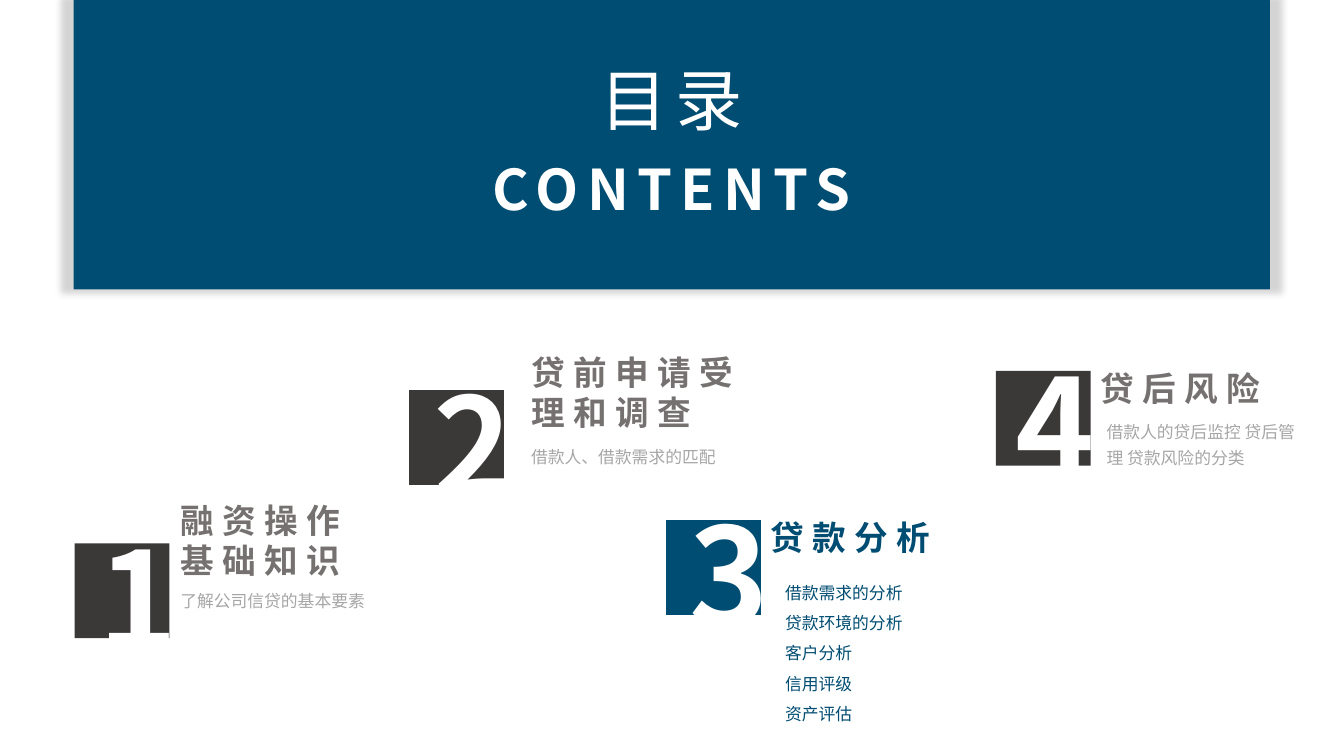
from lxml.etree import SubElement
from pptx import Presentation
from pptx.dml.color import RGBColor
from pptx.enum.shapes import MSO_SHAPE
from pptx.enum.text import MSO_ANCHOR, MSO_AUTO_SIZE, PP_ALIGN
from pptx.oxml.ns import qn
from pptx.util import Pt

BLUE = RGBColor(0x00, 0x4D, 0x73)
CHARCOAL = RGBColor(0x3B, 0x38, 0x38)
GRAY = RGBColor(0x76, 0x71, 0x71)
LIGHT_GRAY = RGBColor(0xA6, 0xA6, 0xA6)
WHITE = RGBColor(0xFF, 0xFF, 0xFF)

SANS = "Noto Sans CJK SC"
LATIN = "Calibri"

BANNER = (52.56, -0.72, 854.64, 207.36)
# text, top, size, font, bold
BANNER_LINES = [
    ("CONTENTS", 92.88, 40, SANS, True),
    ("目录", 33.84, 48, LATIN, False),
]
BANNER_LINE_HEIGHT = 69.12

SQUARE = 67.68
DIGIT_RISE = 24
DIGIT_SIZE = (68.4, 123.84)

# Boxes are left, top, width, height; colours are square, title, details
MUTED = (CHARCOAL, GRAY, LIGHT_GRAY)
ACTIVE = (BLUE, BLUE, BLUE)
SECTIONS = [
    dict(square=(53.28, 388.08), digit_shift=10, colors=MUTED, spacing=1.3,
         title="融资操作基础知识", title_box=(121.68, 350.64, 152.64, 67.68),
         details=["了解公司信贷的基本要素"],
         details_box=(121.68, 414, 152.64, 25.92)),
    dict(square=(292.32, 278.64), digit_shift=10, colors=MUTED, spacing=1.3,
         title="贷前申请受理和调查", title_box=(372.24, 247.68, 182.16, 64.8),
         details=["借款人、借款需求的匹配"],
         details_box=(372.24, 311.04, 152.64, 25.92)),
    dict(square=(475.92, 371.52), digit_shift=9.5, colors=ACTIVE, spacing=1.5,
         title="贷款分析", title_box=(543.6, 371.52, 152.64, 30.24),
         details=["借款需求的分析", "贷款环境的分析", "客户分析", "信用评级", "资产评估"],
         details_box=(553.68, 405.36, 171.36, 113.76)),
    dict(square=(711.36, 264.96), digit_shift=7.2, colors=MUTED, spacing=1.3,
         title="贷后风险", title_box=(779.04, 264.96, 152.64, 30.24),
         details=["借款人的贷后监控 贷后管理 贷款风险的分类"],
         details_box=(783.36, 293.04, 152.64, 44.64)),
]


def add_rectangle(slide, box, color):
    shape = slide.shapes.add_shape(MSO_SHAPE.RECTANGLE, *map(Pt, box))
    shape.shadow.inherit = False
    shape.fill.solid()
    shape.fill.fore_color.rgb = color
    shape.line.fill.background()
    return shape


def add_side_shadow(shape):
    """Give the shape a soft shadow that is slightly wider than the shape."""
    effects = shape._element.spPr.find(qn("a:effectLst"))
    shadow = SubElement(effects, qn("a:outerShdw"), blurRad=str(Pt(5)),
                        sx="102000", sy="102000", algn="ctr", rotWithShape="0")
    color = SubElement(shadow, qn("a:srgbClr"), val="000000")
    SubElement(color, qn("a:alpha"), val="16000")


def add_text(slide, box, lines, size, color, font=SANS, bold=False, tracking=0,
             anchor=MSO_ANCHOR.TOP, align=PP_ALIGN.LEFT, spacing=None, grow=False):
    text_frame = slide.shapes.add_textbox(*map(Pt, box)).text_frame
    text_frame.word_wrap = True
    text_frame.auto_size = MSO_AUTO_SIZE.SHAPE_TO_FIT_TEXT if grow else MSO_AUTO_SIZE.NONE
    text_frame.vertical_anchor = anchor
    text_frame.text = "\n".join(lines)
    for paragraph in text_frame.paragraphs:
        paragraph.alignment = align
        paragraph.line_spacing = spacing
        for run in paragraph.runs:
            run.font.size = Pt(size)
            run.font.bold = bold
            run.font.color.rgb = color
            run.font.name = font
            properties = run._r.get_or_add_rPr()
            if font == SANS:
                SubElement(properties, qn("a:ea"), typeface=font)
            if tracking:
                properties.set("spc", str(tracking * 100))


def add_banner(slide):
    add_side_shadow(add_rectangle(slide, BANNER, BLUE))
    left, _, width, _ = BANNER
    for text, top, size, font, bold in BANNER_LINES:
        add_text(slide, (left, top, width, BANNER_LINE_HEIGHT), [text], size, WHITE,
                 font, bold, tracking=6, anchor=MSO_ANCHOR.BOTTOM, align=PP_ALIGN.CENTER)


def add_section(slide, number, section):
    left, top = section["square"]
    square_color, title_color, details_color = section["colors"]
    add_rectangle(slide, (left, top, SQUARE, SQUARE), square_color)
    digit_box = (left + section["digit_shift"], top - DIGIT_RISE, *DIGIT_SIZE)
    add_text(slide, digit_box, [str(number)], 96, WHITE, bold=True)
    add_text(slide, section["title_box"], [section["title"]], 24, title_color,
             bold=True, tracking=6, anchor=MSO_ANCHOR.BOTTOM)
    add_text(slide, section["details_box"], section["details"], 12, details_color,
             spacing=section["spacing"], grow=True)


def main():
    presentation = Presentation()
    presentation.slide_width = Pt(960)
    presentation.slide_height = Pt(540)
    slide = presentation.slides.add_slide(presentation.slide_layouts[6])
    add_banner(slide)
    for number, section in enumerate(SECTIONS, start=1):
        add_section(slide, number, section)
    presentation.save("out.pptx")


if __name__ == "__main__":
    main()
